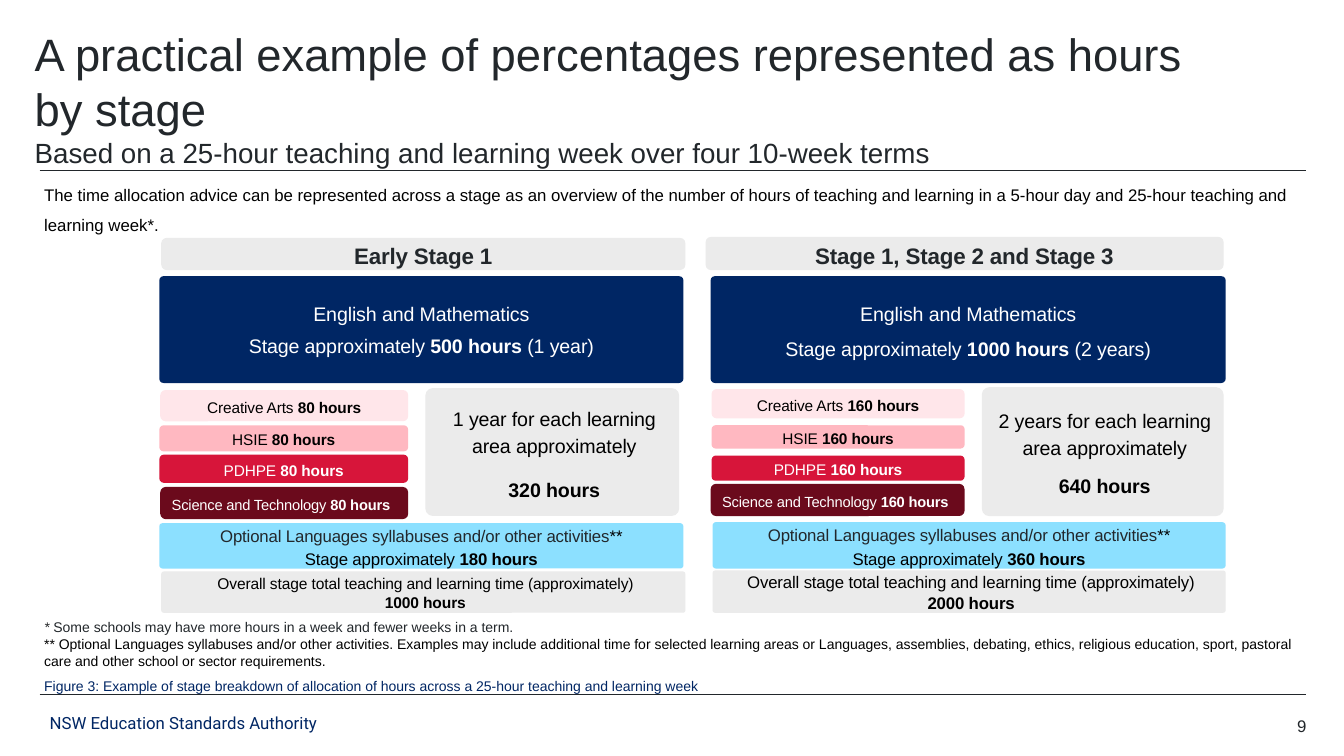
from pptx import Presentation
from pptx.dml.color import RGBColor
from pptx.enum.shapes import MSO_CONNECTOR, MSO_SHAPE as SHAPE
from pptx.enum.text import MSO_ANCHOR as ANCHOR, PP_ALIGN as ALIGN
from pptx.oxml.ns import qn
from pptx.util import Pt
from lxml.etree import SubElement

COLORS = {
    "ink": "22272B", "black": "000000", "white": "FFFFFF", "navy": "002664",
    "grey": "EBEBEB", "sky": "8CE0FF", "blush": "FFE6EA", "pink": "FFB8C1",
    "red": "D7153A", "maroon": "6B0A1C", "mark": "25282A",
}
BOLD = {"bold": True}

# Texts outside the stages: box, paragraphs of runs, format
TITLE = [
    [("A practical example of percentages represented as hours by stage", {"size": 32.4})],
    [("Based on a 25-hour teaching and learning week over four 10-week terms", {"size": 19.8})],
]
INTRO = [[("The time allocation advice can be represented across a stage as an overview of the "
           "number of hours of teaching and learning in a 5-hour day and 25-hour teaching and "
           "learning week*.", {})]]
NOTES = [
    [("* ", {"italic": True, "color": "mark"}),
     ("Some schools may have more hours in a week and fewer weeks in a term.", {"color": "ink"})],
    [("** Optional Languages syllabuses and/or other activities. Examples may include additional "
      "time for selected learning areas or Languages, assemblies, debating, ethics, religious "
      "education, sport, pastoral care and other school or sector requirements.", {})],
    [("Figure 3: Example of stage breakdown of allocation of hours across a 25-hour teaching "
      "and learning week", {"color": "navy"})],
]
TEXTS = [
    ((28.4, 473, 671.8, 54), [[("NSW Education Standards Authority", {})]],
     {"size": 12, "name": "Roboto", "color": "navy", "anchor": ANCHOR.BOTTOM}),
    ((24.8, 19, 853.9, 100), TITLE, {"color": "ink", "inset": (0, 0, 0)}),
    ((876.2, 513, 56.9, 14.4), [[("9", {})]],
     {"size": 12, "color": "ink", "inset": (0, 0, 0), "spacing": 0.9, "align": ALIGN.RIGHT}),
    ((24.5, 121, 924.5, 48.2), INTRO, {"size": 12, "spacing": 1.5}),
    ((24.5, 438.5, 916.6, 61.9), NOTES, {"size": 10, "after": [0, 6, 0]}),
]

# The two stages: words, then one box for each part
STAGES = [
    {"name": "Early Stage 1", "core": "500 hours ", "length": "(1 year)", "area": "80 hours",
     "each": "1 year for each learning area approximately", "areas": "320 hours",
     "optional": "180 hours", "total": "1000 hours",
     "core_spacing": 1, "areas_spacing": 1.15, "total_size": 11.1,
     "boxes": {
         "header": (115.2, 169.9, 374.4, 23), "core": (113.8, 197.3, 374.4, 76.3),
         "optional": (113.8, 373.7, 374.4, 32.4), "total": (115.2, 408.2, 374.4, 29.5),
         "each": (303.8, 277.2, 181.4, 91.4),
         "Creative Arts": (114.5, 278.6, 177.1, 22.3), "HSIE": (113.8, 303.8, 177.8, 18.7),
         "PDHPE": (113.8, 324.7, 177.8, 20.2),
         "Science and Technology": (114.5, 347.8, 177.1, 23)}},
    {"name": "Stage 1, Stage 2 and Stage 3", "core": "1000 hours ", "length": "(2 years)",
     "area": "160 hours", "each": "2 years for each learning area approximately",
     "areas": "640 hours", "optional": "360 hours", "total": "2000 hours",
     "core_spacing": 1.15, "areas_spacing": 0.95, "total_size": 12,
     "boxes": {
         "header": (504, 169.2, 370.1, 23.8), "core": (507.6, 197.3, 367.9, 76.3),
         "optional": (509, 373, 366.5, 33.1), "total": (509, 407.5, 366.5, 30.2),
         "each": (701.3, 276.5, 172.8, 92.2),
         "Creative Arts": (508.3, 277.9, 180.7, 20.9), "HSIE": (508.3, 303.8, 180.7, 16.6),
         "PDHPE": (508.3, 325.4, 180.7, 18),
         "Science and Technology": (507.6, 345.6, 181.4, 23)}},
]
# Learning area: fill, text colour, size, alignment
AREAS = {
    "Creative Arts": ("blush", "black", 11, ALIGN.CENTER),
    "HSIE": ("pink", "black", 11, ALIGN.CENTER),
    "PDHPE": ("red", "white", 11, ALIGN.CENTER),
    "Science and Technology": ("maroon", "white", 10.5, ALIGN.LEFT),
}
RULE_LEFT, RULE_RIGHT, RULE_YS = 28.4, 932.6, (121.7, 496.1)


def rgb(name):
    return RGBColor.from_string(COLORS[name])


def write(sp, paragraphs, size=12, name="Arial", color="black", bold=False, align=ALIGN.LEFT,
          anchor=ANCHOR.TOP, inset=(7.2, 7.2, 3.6), spacing=1, after=0, track=None):
    """Fill a shape; spacing and after may be one value or one for each paragraph."""
    tf = sp.text_frame
    left, right, edge = inset
    frame = {"word_wrap": True, "vertical_anchor": anchor,
             "margin_left": Pt(left), "margin_right": Pt(right),
             "margin_top": Pt(edge), "margin_bottom": Pt(edge)}
    for key, value in frame.items():
        setattr(tf, key, value)
    for i, runs in enumerate(paragraphs):
        p = tf.add_paragraph() if i else tf.paragraphs[0]
        p.alignment = align
        p.line_spacing = float(spacing[i] if isinstance(spacing, list) else spacing)
        p.space_after = Pt(after[i] if isinstance(after, list) else after)
        for text, changes in runs:
            fmt = {"size": size, "name": name, "bold": bold, "color": color} | changes
            r = p.add_run()
            r.text = text
            r.font.color.rgb = rgb(fmt.pop("color"))
            fmt["size"] = Pt(fmt["size"])
            for key, value in fmt.items():
                setattr(r.font, key, value)
            if track:
                r.font._element.set("spc", str(track))


def block(box, fill, paragraphs, radius=None, kind=SHAPE.ROUNDED_RECTANGLE, **fmt):
    sp = slide.shapes.add_shape(kind, *map(Pt, box))
    sp.shadow.inherit = False
    sp.fill.solid()
    sp.fill.fore_color.rgb = rgb(fill)
    sp.line.fill.background()
    if radius:
        sp.adjustments[0] = radius
    write(sp, paragraphs, **({"align": ALIGN.CENTER, "anchor": ANCHOR.MIDDLE,
                              "spacing": 1.15, "track": -10} | fmt))


prs = Presentation()
prs.slide_width, prs.slide_height = Pt(960), Pt(540)
slide = prs.slides.add_slide(prs.slide_layouts[6])

# Rules under the title and above the footer
for y in RULE_YS:
    rule = slide.shapes.add_connector(MSO_CONNECTOR.STRAIGHT, Pt(RULE_LEFT), Pt(y),
                                      Pt(RULE_RIGHT), Pt(y))
    rule.line.color.rgb = rgb("ink")
    rule.line.width = Pt(0.5)
    SubElement(rule._element.spPr, qn("a:effectLst"))

# Title, introduction, notes and footer
for box, paragraphs, fmt in TEXTS:
    write(slide.shapes.add_textbox(*map(Pt, box)), paragraphs, **fmt)

# Stage columns
for stage in STAGES:
    boxes = stage["boxes"]
    approx = ("Stage approximately ", {})
    block(boxes["header"], "grey", [[(stage["name"], {})]], size=16, color="ink", bold=True,
          kind=SHAPE.FLOWCHART_ALTERNATE_PROCESS)
    block(boxes["core"], "navy",
          [[("English and Mathematics", {})],
           [approx, (stage["core"], BOLD), (stage["length"], {})]],
          radius=0.04, size=14, color="white", spacing=stage["core_spacing"], after=6)
    block(boxes["optional"], "sky",
          [[("Optional Languages syllabuses and/or other activities", {"color": "ink"}),
            ("**", {})],
           [approx, (stage["optional"], BOLD)]], radius=0.07)
    for area, (fill, color, size, align) in AREAS.items():
        block(boxes[area], fill, [[(area + " ", {}), (stage["area"], BOLD)]],
              color=color, size=size, align=align)
    block(boxes["each"], "grey", [[(stage["each"], {})], [(stage["areas"], BOLD)]],
          radius=0.06, size=14, inset=(2.9, 0, 0), after=12,
          spacing=[1.15, stage["areas_spacing"]])
    block(boxes["total"], "grey",
          [[("Overall stage total teaching and learning time (approximately)", {})],
           [(stage["total"], BOLD)]],
          radius=0.06, size=stage["total_size"], inset=(2.9, 0, 0), spacing=1.05)

prs.save("out.pptx")
